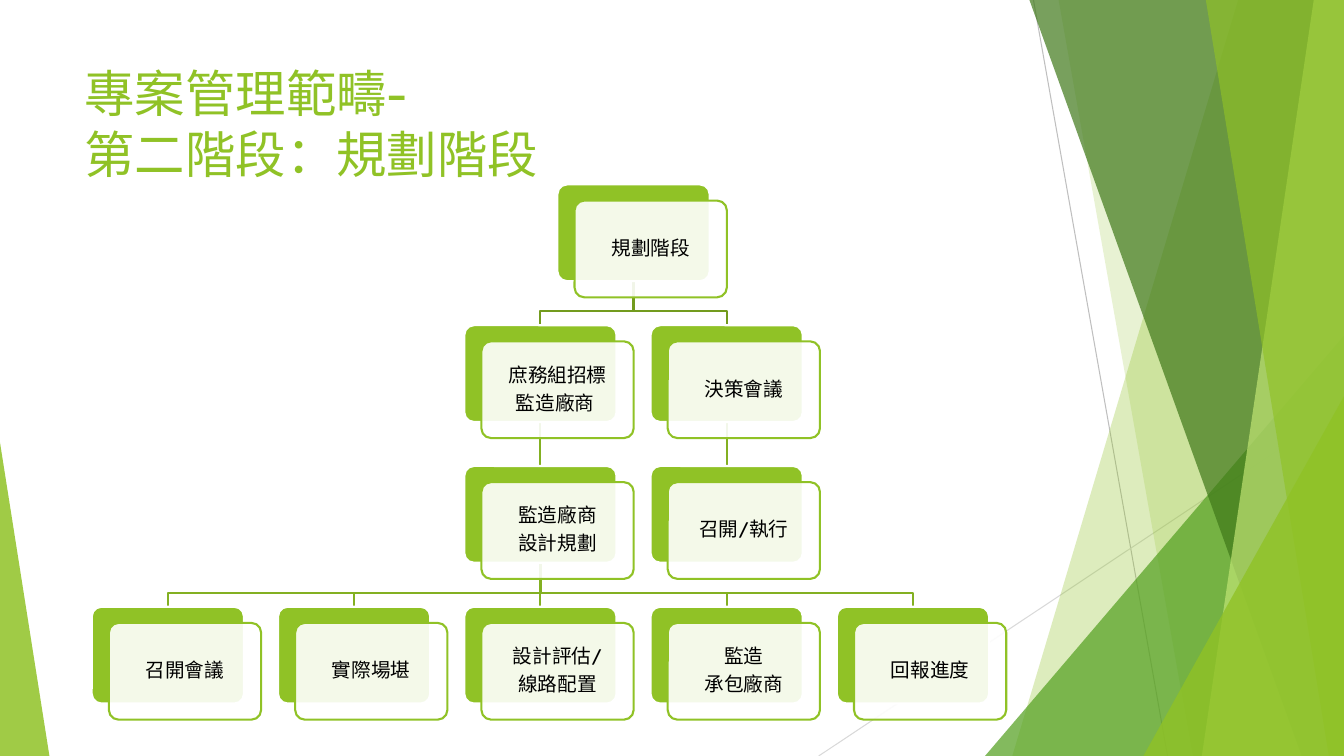
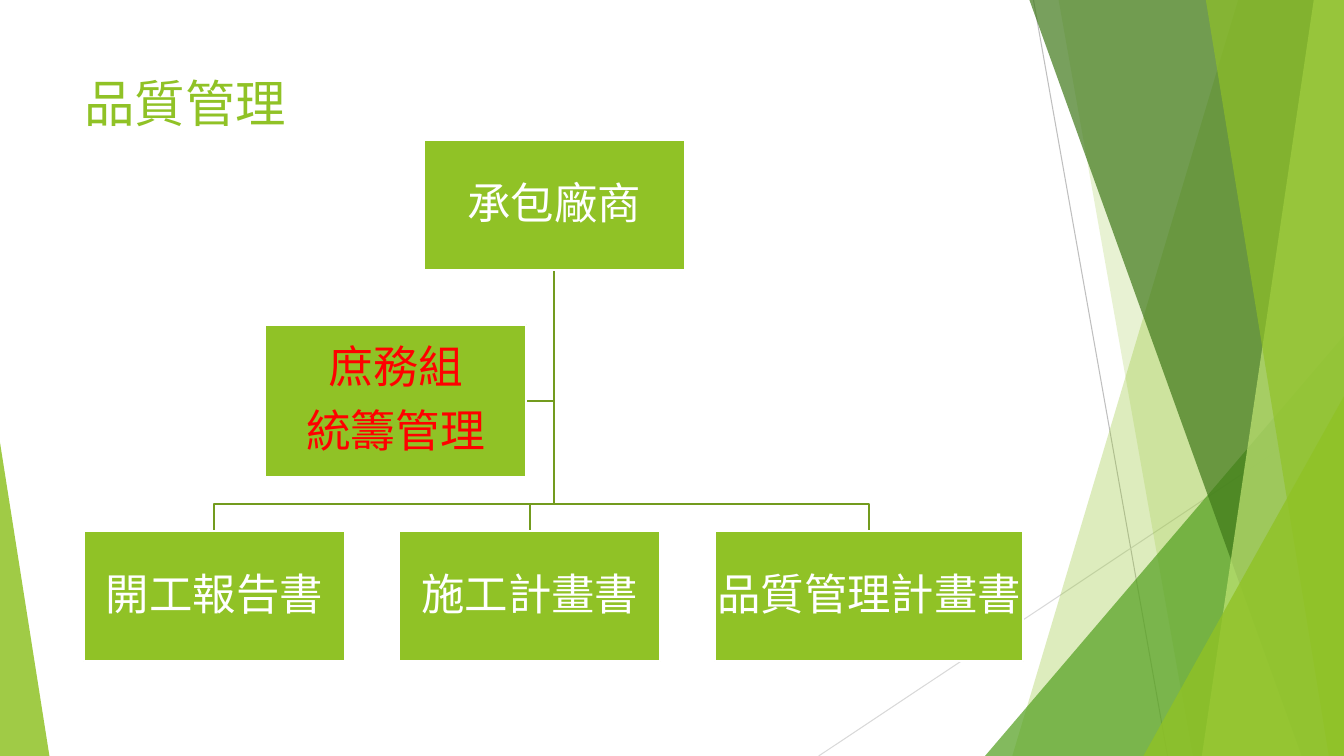
from dataclasses import dataclass

from lxml import etree
from pptx import Presentation
from pptx.dml.color import RGBColor
from pptx.enum.shapes import MSO_CONNECTOR, MSO_SHAPE
from pptx.enum.text import MSO_ANCHOR, PP_ALIGN
from pptx.oxml.ns import qn
from pptx.util import Inches, Pt

RECT, ROUND = MSO_SHAPE.RECTANGLE, MSO_SHAPE.ROUNDED_RECTANGLE
WEDGE, LINE = MSO_SHAPE.ISOSCELES_TRIANGLE, MSO_CONNECTOR.STRAIGHT
LEFT, CENTER = PP_ALIGN.LEFT, PP_ALIGN.CENTER
TOP, MIDDLE = MSO_ANCHOR.TOP, MSO_ANCHOR.MIDDLE
WIDE, HIGH = 13.33, 7.5

Point = tuple[float, float]


@dataclass(frozen=True)
class Theme:
    font: str = "Cabin"
    green: str = "90C226"
    leaf: str = "54A021"
    pine: str = "3F7819"
    lime: str = "C0E474"
    stem: str = "739B1E"
    twig: str = "83B022"
    white: str = "FFFFFF"
    black: str = "000000"
    red: str = "FF0000"
    gray: str = "BFBFBF"
    pale: str = "D9D9D9"
    title: int = 36
    small: int = 14
    large: int = 31
    strong: int = 32
    thin: float = 0.75
    pen: float = 1.5


THEME = Theme()


@dataclass(frozen=True)
class Box:
    left: float
    top: float
    wide: float
    high: float

    @property
    def mid(self) -> float:
        return self.left + self.wide / 2

    @property
    def base(self) -> float:
        return self.top + self.high

    def place(self) -> list:
        return [Inches(n) for n in (self.left, self.top, self.wide, self.high)]


@dataclass(frozen=True)
class Band:
    """Full-height band: left edge from top to foot, right edge of the slide."""
    top: float
    foot: float
    color: str
    alpha: int


@dataclass(frozen=True)
class Spike:
    box: Box
    apex: float
    color: str
    alpha: int


@dataclass(frozen=True)
class Node:
    col: float
    row: int
    text: str


# Shared drawing helpers
def paint(shape, color: str, alpha: int = 100, edge: str = "") -> None:
    shape.shadow.inherit = False
    shape.fill.solid()
    shape.fill.fore_color.rgb = RGBColor.from_string(color)
    if alpha < 100:
        for tint in shape.element.spPr.iter(qn("a:srgbClr")):
            etree.SubElement(tint, qn("a:alpha"), val=str(alpha * 1000))
    if edge:
        ink(shape, edge, THEME.pen)
    else:
        shape.line.fill.background()


def ink(shape, color: str, width: float) -> None:
    shape.line.color.rgb = RGBColor.from_string(color)
    shape.line.width = Pt(width)


def trace(slide, points: list[Point], closed: bool):
    start, *rest = [(Inches(x), Inches(y)) for x, y in points]
    pen = slide.shapes.build_freeform(*start, scale=1.0)
    pen.add_line_segments(rest, close=closed)
    return pen.convert_to_shape()


def rule(slide, start: Point, end: Point, color: str, width: float) -> None:
    line = slide.shapes.add_connector(
        LINE, *[Inches(n) for n in (*start, *end)])
    ink(line, color, width)
    etree.SubElement(line.element.spPr, qn("a:effectLst"))


def route(slide, points: list[Point], color: str) -> None:
    if len({x for x, _ in points}) == 1:
        rule(slide, points[0], points[-1], color, THEME.pen)
        return
    path = trace(slide, points, False)
    path.shadow.inherit = False
    path.fill.background()
    ink(path, color, THEME.pen)


def write(shape, lines: list[str], size: int, color: str, inset: float = 0,
          align=CENTER, anchor=MIDDLE, pitch: float = 0.9,
          after: float = 0.35) -> None:
    frame = shape.text_frame
    pad = Inches(inset)
    look = {"word_wrap": True, "vertical_anchor": anchor,
            "margin_left": pad, "margin_right": pad,
            "margin_top": pad, "margin_bottom": pad}
    for name, value in look.items():
        setattr(frame, name, value)
    form = {"alignment": align, "line_spacing": pitch,
            "space_after": Pt(after * size)}
    for spot, line in enumerate(lines):
        para = frame.paragraphs[0] if spot == 0 else frame.add_paragraph()
        para.text = line
        for name, value in form.items():
            setattr(para, name, value)
        for run in para.runs:
            for name, value in {"name": THEME.font, "size": Pt(size)}.items():
                setattr(run.font, name, value)
            run.font.color.rgb = RGBColor.from_string(color)
            east = etree.SubElement(run.font._element, qn("a:ea"))
            east.set("typeface", THEME.font)


def head(slide, text: str, top: float) -> None:
    area = slide.shapes.add_textbox(*Box(0.74, top, 9.4, 1.44).place())
    write(area, [text], THEME.title, THEME.green, align=LEFT, anchor=TOP,
          pitch=1.0, after=0)
    frame = area.text_frame
    frame.margin_left = frame.margin_right = Inches(0.1)
    frame.margin_top = frame.margin_bottom = Inches(0.05)


# Backdrop, drawn once and held by the layout
def corner(wide: float, high: float, left: float = -1) -> Box:
    return Box(WIDE - wide if left < 0 else left, HIGH - high, wide, high)


DECOR = [
    Band(12.28, 10.04, THEME.green, 30),
    Band(10.5, 11.83, THEME.green, 20),
    Spike(corner(3.56, 4.17), 1, THEME.leaf, 72),
    Band(10.21, 12.91, THEME.pine, 70),
    Band(13.03, 11.92, THEME.lime, 70),
    Band(11.96, 13.18, THEME.green, 65),
    Spike(corner(1.99, 3.57), 1, THEME.green, 80),
    Spike(corner(0.49, 3.11, 0), 0, THEME.green, 85),
]


def decor(slide, layout) -> None:
    rule(slide, (10.25, 0), (11.58, HIGH), THEME.gray, THEME.thin)
    rule(slide, (WIDE, 4.03), (8.12, HIGH), THEME.pale, THEME.thin)
    for part in DECOR:
        if isinstance(part, Band):
            shape = trace(slide, [(part.top, 0), (WIDE, 0), (WIDE, HIGH),
                                  (part.foot, HIGH)], True)
        else:
            shape = slide.shapes.add_shape(WEDGE, *part.box.place())
            shape.adjustments[0] = part.apex
        paint(shape, part.color, part.alpha)
    for old in list(layout.placeholders):
        old.element.getparent().remove(old.element)
    for shape in list(slide.shapes):
        layout.shapes.element.append(shape.element)


# Planning tree on a grid of five columns and four rows
COL, ROW = 7.39 / 4, 4.19 / 3
NODES = {
    "plan": Node(2.5, 0, "規劃階段"),
    "bid": Node(2, 1, "庶務組招標\n監造廠商 "),
    "draft": Node(2, 2, "監造廠商\n設計規劃"),
    "meet": Node(0, 3, "召開會議"),
    "site": Node(1, 3, "實際場堪"),
    "cost": Node(2, 3, "設計評估/\n線路配置"),
    "build": Node(3, 3, "監造\n承包廠商"),
    "report": Node(4, 3, "回報進度"),
    "choose": Node(3, 1, "決策會議"),
    "act": Node(3, 2, "召開/執行"),
}
LINKS = {"plan": ["bid", "choose"], "bid": ["draft"], "choose": ["act"],
         "draft": ["meet", "site", "cost", "build", "report"]}


def cell(node: Node) -> Box:
    return Box(0.91 + node.col * COL, 1.83 + node.row * ROW, 1.51, 0.96)


def card(slide, node: Node) -> None:
    back = cell(node)
    front = Box(back.left + 0.17, back.top + 0.16, back.wide, back.high)
    for box, fill, alpha, edge in (
            (back, THEME.green, 100, THEME.white),
            (front, THEME.white, 90, THEME.green)):
        shape = slide.shapes.add_shape(ROUND, *box.place())
        shape.adjustments[0] = 0.1
        paint(shape, fill, alpha, edge)
    write(shape, node.text.split("\n"), THEME.small, THEME.black, 0.06)


def phase(slide) -> None:
    head(slide, "專案管理範疇-\v第二階段：規劃階段", 0.57)
    for name, kids in LINKS.items():
        start = cell(NODES[name])
        color = THEME.twig if NODES[name].row else THEME.stem
        for kid in kids:
            end = cell(NODES[kid])
            bar = start.base + 0.3
            route(slide, [(start.mid, start.base), (start.mid, bar),
                          (end.mid, bar), (end.mid, end.top)], color)
    for node in NODES.values():
        card(slide, node)


# Quality chart: maker on top, office at the side, three papers below
GAP, SIDE, TALL = 0.54, 2.59, 1.29
PAPERS = {"開工報告書": SIDE, "施工計畫書": SIDE, "品質管理計畫書": 3.06}


def block(slide, box: Box, text: str, size: int, color: str) -> None:
    shape = slide.shapes.add_shape(RECT, *box.place())
    paint(shape, THEME.green, edge=THEME.white)
    write(shape, text.split("\n"), size, color)


def control(slide) -> None:
    head(slide, "品質管理", 0.67)
    maker = Box(4.2, 1.39, SIDE, TALL)
    office = Box(2.63, maker.base + GAP, SIDE, 1.51)
    low, left, papers = office.base + GAP, 0.83, {}
    for text, wide in PAPERS.items():
        papers[text] = Box(left, low, wide, TALL)
        left += wide + GAP

    root = (maker.mid, maker.base)
    level = office.top + office.high / 2
    route(slide, [root, (maker.mid, level),
                  (office.left + office.wide, level)], THEME.stem)
    bar = low - GAP / 2
    for box in papers.values():
        route(slide, [root, (maker.mid, bar), (box.mid, bar),
                      (box.mid, low)], THEME.stem)

    block(slide, maker, "承包廠商", THEME.large, THEME.white)
    for text, box in papers.items():
        block(slide, box, text, THEME.large, THEME.white)
    block(slide, office, "庶務組\n統籌管理", THEME.strong, THEME.red)


def main() -> None:
    deck = Presentation()
    deck.slide_width, deck.slide_height = Inches(WIDE), Inches(HIGH)
    blank = deck.slide_layouts[6]
    first, second = [deck.slides.add_slide(blank) for _ in range(2)]
    for slide in (first, second):
        for hold in list(slide.placeholders):
            hold.element.getparent().remove(hold.element)
    decor(first, blank)
    phase(first)
    control(second)
    deck.save("out.pptx")


if __name__ == "__main__":
    main()
